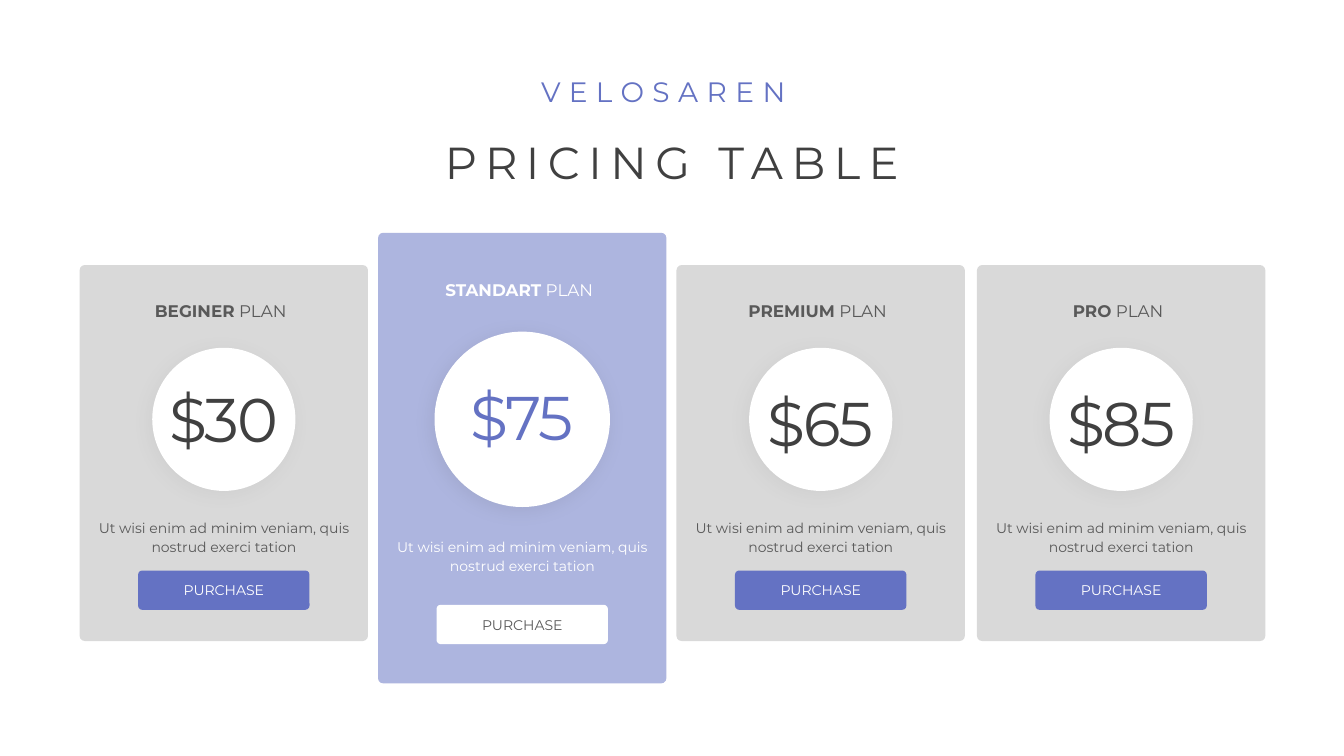
"""Build the pricing table slide with four plan cards."""
from dataclasses import dataclass

from lxml import etree
from pptx import Presentation
from pptx.dml.color import RGBColor
from pptx.enum.shapes import MSO_SHAPE
from pptx.enum.text import MSO_ANCHOR, MSO_AUTO_SIZE, PP_ALIGN
from pptx.oxml.ns import qn
from pptx.shapes.autoshape import Shape
from pptx.shapes.group import GroupShape
from pptx.text.text import TextFrame
from pptx.util import Inches, Pt

ROUNDED, OVAL = MSO_SHAPE.ROUNDED_RECTANGLE, MSO_SHAPE.OVAL
TOP, MIDDLE = MSO_ANCHOR.TOP, MSO_ANCHOR.MIDDLE
LEFT, CENTER = PP_ALIGN.LEFT, PP_ALIGN.CENTER
NO_AUTOFIT = MSO_AUTO_SIZE.NONE


@dataclass(frozen=True)
class Theme:
    """Colours, font and type sizes of the slide."""

    font: str = "Montserrat"
    white: str = "FFFFFF"
    dark: str = "404040"
    body: str = "595959"
    grey: str = "D9D9D9"
    accent: str = "6472C3"
    pale: str = "ADB5DF"
    title_size: float = 32
    kicker_size: float = 20
    price_size: float = 44
    name_size: float = 12
    small_size: float = 10


THEME = Theme()


@dataclass(frozen=True)
class Box:
    """A rectangle in inches."""

    left: float
    top: float
    width: float
    height: float

    def lengths(self) -> tuple[Inches, ...]:
        """Return the four sides as lengths."""
        return tuple(Inches(v) for v in (self.left, self.top, self.width, self.height))


@dataclass(frozen=True)
class Run:
    """A piece of text with its format."""

    text: str
    size: float
    color: str
    bold: bool = False
    spacing: float = 0


@dataclass(frozen=True)
class CardStyle:
    """Vertical layout and colours of a card."""

    top: float
    height: float
    name_top: float
    circle_top: float
    circle_size: float
    shadow_alpha: int
    about_top: float
    button_top: float
    fill: str
    text: str
    price: str
    button: str
    button_text: str


@dataclass(frozen=True)
class Plan:
    """A plan on offer and the place of its card."""

    name: str
    price: str
    left: float
    price_top: float
    style: CardStyle


PLAIN = CardStyle(2.63, 3.73, 2.93, 3.45, 1.42, 6, 5.08, 5.66,
                  THEME.grey, THEME.body, THEME.dark, THEME.accent, THEME.white)
FEATURED = CardStyle(2.31, 4.47, 2.73, 3.29, 1.74, 10, 5.27, 6.0,
                     THEME.pale, THEME.white, THEME.accent, THEME.white, THEME.body)
PLANS = (
    Plan("BEGINER", "$30", 0.79, 3.73, PLAIN),
    Plan("PREMIUM", "$65", 6.71, 3.77, PLAIN),
    Plan("PRO", "$85", 9.69, 3.77, PLAIN),
    Plan("STANDART", "$75", 3.75, 3.71, FEATURED),
)
ABOUT = "Ut wisi enim ad minim veniam, quis nostrud exerci tation"
CARD_WIDTH = 2.86


def write(tf: TextFrame, runs: list[Run], anchor: MSO_ANCHOR = TOP,
          align: PP_ALIGN = CENTER, line_spacing: float = 1.0) -> None:
    """Fill a text frame with one paragraph of formatted runs."""
    frame = {"word_wrap": True, "auto_size": NO_AUTOFIT, "vertical_anchor": anchor}
    for key, value in frame.items():
        setattr(tf, key, value)
    p = tf.paragraphs[0]
    p.alignment, p.line_spacing = align, line_spacing
    for run in runs:
        r = p.add_run()
        r.text = run.text
        fmt = {"name": THEME.font, "size": Pt(run.size), "bold": run.bold}
        for key, value in fmt.items():
            setattr(r.font, key, value)
        r.font.color.rgb = RGBColor.from_string(run.color)
        if run.spacing:
            r.font._element.set("spc", str(int(run.spacing * 100)))


def add_panel(group: GroupShape, kind: MSO_SHAPE, box: Box, fill: str,
              corner: float | None = None) -> Shape:
    """Add a filled shape without outline."""
    sp = group.shapes.add_shape(kind, *box.lengths())
    sp.shadow.inherit = False
    sp.fill.solid()
    sp.fill.fore_color.rgb = RGBColor.from_string(fill)
    sp.line.fill.background()
    if corner is not None:
        sp.adjustments[0] = corner
    return sp


def add_shadow(sp: Shape, alpha: int) -> None:
    """Give a shape a soft shadow towards the lower left."""
    effects = sp._element.spPr.find(qn("a:effectLst"))
    shadow = etree.SubElement(effects, qn("a:outerShdw"), blurRad=str(Pt(13)),
                              dist=str(Pt(3)), dir=str(135 * 60000),
                              algn="tr", rotWithShape="0")
    color = etree.SubElement(shadow, qn("a:srgbClr"), val=THEME.dark)
    etree.SubElement(color, qn("a:alpha"), val=str(alpha * 1000))


def add_card(group: GroupShape, plan: Plan) -> None:
    """Draw the card of one plan."""
    st = plan.style

    def centred(top: float, width: float, height: float, shift: float = 0) -> Box:
        """Return a box centred across the card."""
        return Box(plan.left + (CARD_WIDTH - width) / 2 + shift, top, width, height)

    def text_frame(box: Box) -> TextFrame:
        """Add a text box and return its frame."""
        return group.shapes.add_textbox(*box.lengths()).text_frame

    add_panel(group, ROUNDED, centred(st.top, CARD_WIDTH, st.height), st.fill, 0.018)
    write(text_frame(centred(st.name_top, 2.57, 0.3, -0.03)),
          [Run(plan.name, THEME.name_size, st.text, bold=True),
           Run(" PLAN", THEME.name_size, st.text)])
    circle = add_panel(group, OVAL, centred(st.circle_top, st.circle_size, st.circle_size),
                       THEME.white)
    add_shadow(circle, st.shadow_alpha)
    write(text_frame(centred(plan.price_top, 1.62, 0.84)),
          [Run(plan.price, THEME.price_size, st.price, spacing=-1.5)], MIDDLE)
    write(text_frame(centred(st.about_top, 2.69, 0.47)),
          [Run(ABOUT, THEME.small_size, st.text)], line_spacing=1.14)
    button = add_panel(group, ROUNDED, centred(st.button_top, 1.7, 0.39), st.button, 0.105)
    write(button.text_frame, [Run("PURCHASE", THEME.small_size, st.button_text)], MIDDLE)


def main() -> None:
    """Build and save the presentation."""
    prs = Presentation()
    prs.slide_width, prs.slide_height = Inches(13.33), Inches(7.5)
    s = prs.slides.add_slide(prs.slide_layouts[5])
    title = s.shapes.title
    title.left, title.top, title.width, title.height = Box(1.47, 1.29, 10.39, 0.64).lengths()
    write(title.text_frame, [Run("PRICING TABLE", THEME.title_size, THEME.dark, spacing=6)])
    for plan in PLANS:
        add_card(s.shapes.add_group_shape(), plan)
    kicker = s.shapes.add_textbox(*Box(5.27, 0.69, 2.8, 0.44).lengths())
    write(kicker.text_frame,
          [Run("VELOSAREN", THEME.kicker_size, THEME.accent, spacing=6)], align=LEFT)
    prs.save("out.pptx")


if __name__ == "__main__":
    main()
